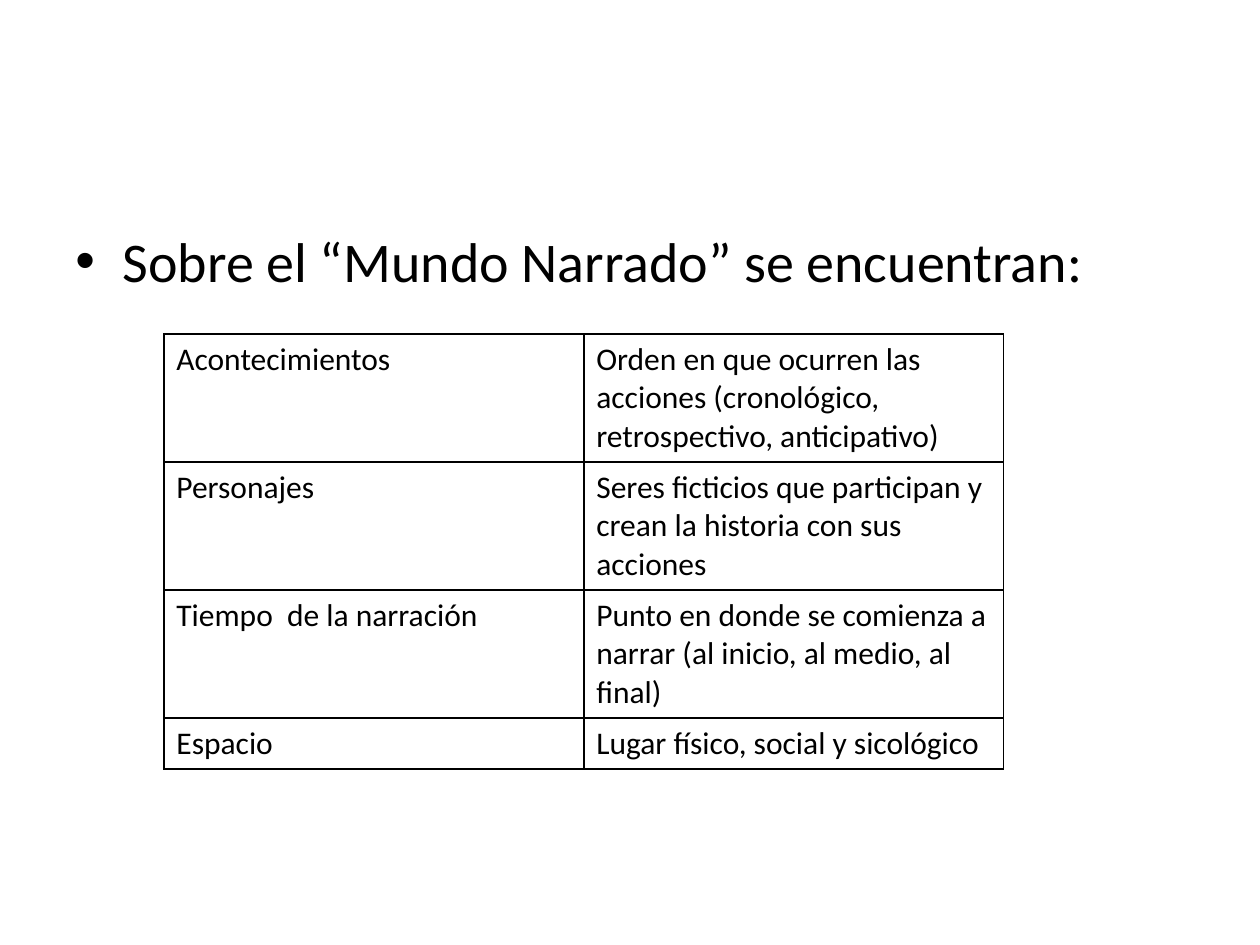
from pptx import Presentation
from pptx.dml.color import RGBColor
from pptx.oxml import parse_xml
from pptx.oxml.ns import nsdecls
from pptx.util import Pt

LEAD = "Sobre el “Mundo Narrado” se encuentran:"
ROWS = [
    ("Acontecimientos",
     "Orden en que ocurren las acciones (cronológico, retrospectivo, anticipativo)"),
    ("Personajes",
     "Seres ficticios que participan y crean la historia con sus acciones"),
    ("Tiempo  de la narración",
     "Punto en donde se comienza a narrar (al inicio, al medio, al final)"),
    ("Espacio", "Lugar físico, social y sicológico"),
]
HIGH = [73.15, 73.15, 73.15, 29.2]
WIDE = 240
INK = "000000"


def style(para, size):
    para.font.name = "Calibri"
    para.font.size = Pt(size)
    para.font.color.rgb = RGBColor.from_string(INK)


def border(cell):
    # Side lines come before the fill in the cell properties
    props = cell._tc.get_or_add_tcPr()
    for spot, side in enumerate(("lnL", "lnR", "lnT", "lnB")):
        props.insert(spot, parse_xml(
            f'<a:{side} {nsdecls("a")} w="{Pt(1)}"><a:solidFill>'
            f'<a:srgbClr val="{INK}"/></a:solidFill></a:{side}>'))


deck = Presentation()
deck.slide_width, deck.slide_height = Pt(720), Pt(540)
slide = deck.slides.add_slide(deck.slide_layouts[6])

# Lead line with bullet
box = slide.shapes.add_textbox(Pt(36), Pt(126), Pt(648), Pt(356.4))
box.text_frame.word_wrap = True
para = box.text_frame.paragraphs[0]
para.text = LEAD
para.space_before = Pt(3.6)
style(para, 32)
props = para._p.get_or_add_pPr()
props.set("marL", str(Pt(27)))
props.set("indent", str(-Pt(27)))
mark = [f'<a:buFont {nsdecls("a")} typeface="Arial"/>',
        f'<a:buChar {nsdecls("a")} char="•"/>']
for spot, xml in enumerate(mark, 1):
    props.insert(spot, parse_xml(xml))

# Table of narrative elements
table = slide.shapes.add_table(len(ROWS), 2, Pt(93.6), Pt(190.8),
                               Pt(2 * WIDE), Pt(sum(HIGH))).table
table.first_row = table.horz_banding = False
for col in table.columns:
    col.width = Pt(WIDE)
for row, high, words in zip(table.rows, HIGH, ROWS):
    row.height = Pt(high)
    for cell, word in zip(row.cells, words):
        cell.text = word
        cell.fill.background()
        style(cell.text_frame.paragraphs[0], 18)
        border(cell)

deck.save("out.pptx")
